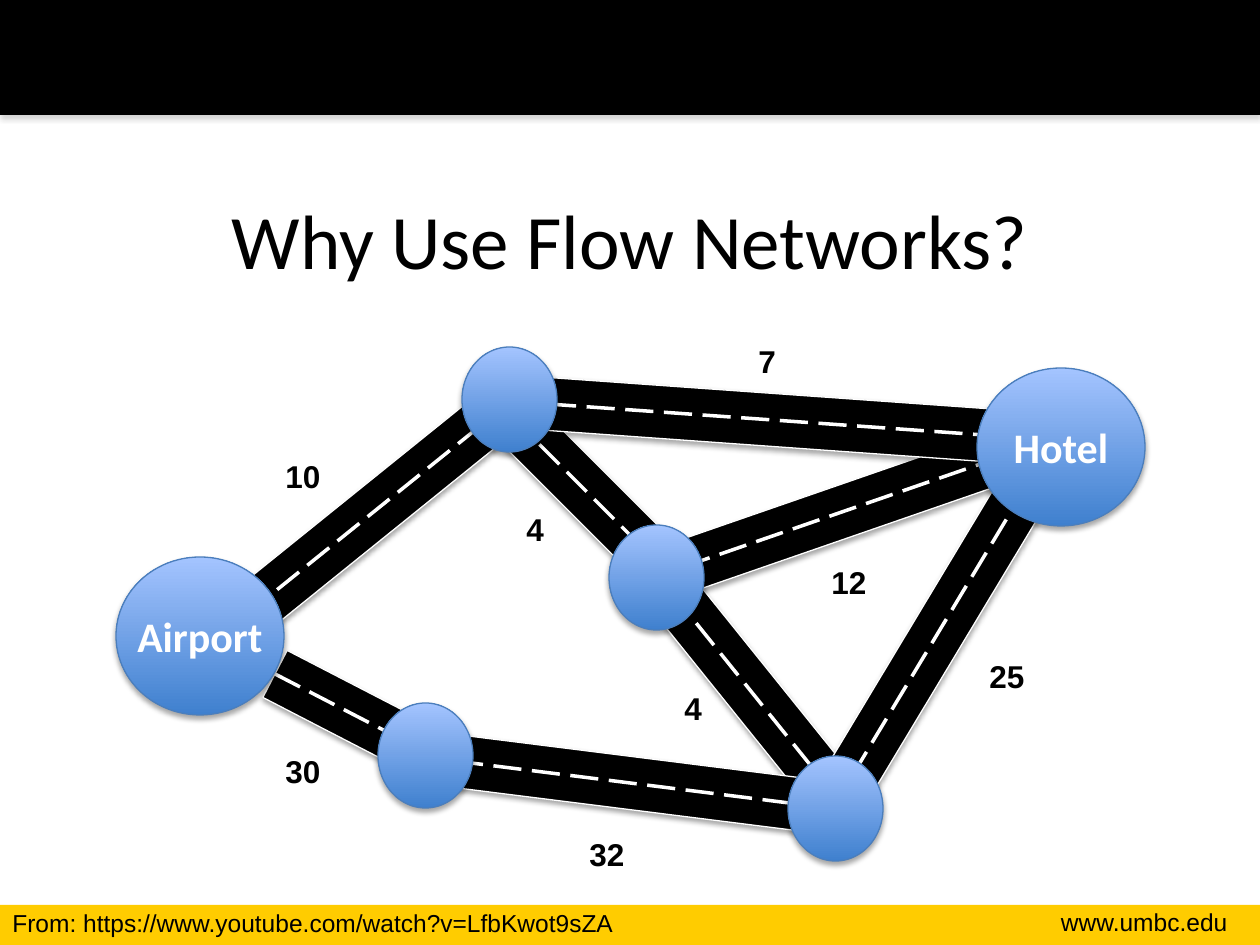
from math import atan2, degrees, hypot

from lxml import etree
from pptx import Presentation
from pptx.dml.color import RGBColor
from pptx.enum.dml import MSO_LINE
from pptx.enum.shapes import MSO_CONNECTOR, MSO_SHAPE
from pptx.enum.text import MSO_ANCHOR, PP_ALIGN
from pptx.oxml import parse_xml
from pptx.oxml.ns import nsdecls, qn
from pptx.util import Pt

RECT, OVAL = MSO_SHAPE.RECTANGLE, MSO_SHAPE.OVAL
STRAIGHT, LONG_DASH = MSO_CONNECTOR.STRAIGHT, MSO_LINE.LONG_DASH
LEFT, CENTER, RIGHT = PP_ALIGN.LEFT, PP_ALIGN.CENTER, PP_ALIGN.RIGHT
MIDDLE = MSO_ANCHOR.MIDDLE
TITLE_ONLY = 5

COLORS = {
    "black": "000000", "white": "FFFFFF", "gold": "FFCC00", "gray": "808080",
    "node_dark": "3F80CE", "node_light": "A4C4FF", "node_line": "4B7EBC",
}
ROAD_WIDTH = 53
LARGE, SMALL = (168, 158), (95, 105)

# Centre line of each road: x1, y1, x2, y2
ROADS = [
    (247, 614, 500, 410), (672, 593, 824, 782), (512, 417, 662, 567),
    (455, 761, 829, 808), (852, 776, 1021, 495), (683, 567, 1018, 451),
    (548, 404, 998, 436), (275, 674, 393, 735),
]
# Places: x, y, size, name
NODES = [
    (116, 557, LARGE, "Airport"), (977, 368, LARGE, "Hotel"),
    (462, 347, SMALL, ""), (378, 703, SMALL, ""),
    (788, 756, SMALL, ""), (609, 525, SMALL, ""),
]
# Road capacities: x, y, value
CAPACITIES = [
    (273, 451, 10), (273, 746, 30), (577, 829, 32), (977, 651, 25),
    (746, 336, 7), (514, 504, 4), (672, 683, 4), (819, 557, 12),
]


def px(n):
    return round(n * 914400 / 126)


def rgb(name):
    return RGBColor.from_string(COLORS[name])


def add_shadow(s, color="black", alpha=35, dist=1.8):
    """Give a shape or connector a soft shadow straight below it."""
    sp_pr = s._element.spPr
    for old in sp_pr.findall(qn("a:effectLst")):
        sp_pr.remove(old)
    effects = parse_xml(f"<a:effectLst {nsdecls('a')}/>")
    shadow = etree.SubElement(
        effects, qn("a:outerShdw"), blurRad=str(Pt(3.1)), dist=str(Pt(dist)),
        dir="5400000", rotWithShape="0")
    clr = etree.SubElement(shadow, qn("a:srgbClr"), val=COLORS[color])
    etree.SubElement(clr, qn("a:alpha"), val=str(alpha * 1000))
    sp_pr.append(effects)


def set_text(tf, text, size, font, color="black", bold=False, align=LEFT):
    p = tf.paragraphs[0]
    p.text = text
    p.alignment = align
    p.font.size, p.font.name, p.font.bold = Pt(size), font, bold
    p.font.color.rgb = rgb(color)


def add_label(slide, x, y, w, h, text, size, bold=False, align=LEFT, wrap=False):
    tf = slide.shapes.add_textbox(px(x), px(y), px(w), px(h)).text_frame
    tf.word_wrap = wrap
    set_text(tf, text, size, "Arial", bold=bold, align=align)


def add_bar(slide, y, h, color):
    s = slide.shapes.add_shape(RECT, 0, px(y), px(1260), px(h))
    s.shadow.inherit = False
    s.fill.solid()
    s.fill.fore_color.rgb = rgb(color)
    s.line.fill.background()
    return s


def add_road(slide, x1, y1, x2, y2):
    """Lay a black road along a dashed centre line."""
    length = hypot(x2 - x1, y2 - y1)
    group = slide.shapes.add_group_shape()
    road = group.shapes.add_shape(
        RECT, px((x1 + x2 - length) / 2), px((y1 + y2 - ROAD_WIDTH) / 2),
        px(length), px(ROAD_WIDTH))
    road.rotation = degrees(atan2(y2 - y1, x2 - x1)) % 360
    road.fill.solid()
    road.fill.fore_color.rgb = rgb("black")
    road.line.color.rgb = rgb("white")
    road.line.width = Pt(0.75)
    add_shadow(road)

    dashes = group.shapes.add_connector(STRAIGHT, px(x1), px(y1), px(x2), px(y2))
    dashes.line.color.rgb = rgb("white")
    dashes.line.width = Pt(2)
    dashes.line.dash_style = LONG_DASH
    add_shadow(dashes, alpha=38, dist=1.6)


def add_node(slide, x, y, size, name):
    w, h = size
    s = slide.shapes.add_shape(OVAL, px(x), px(y), px(w), px(h))
    s.fill.gradient()
    s.fill.gradient_angle = 90
    for stop, color in zip(s.fill.gradient_stops, ("node_dark", "node_light")):
        stop.color.rgb = rgb(color)
    s.line.color.rgb = rgb("node_line")
    s.line.width = Pt(0.75)
    add_shadow(s)
    if name:
        s.text_frame.word_wrap = False
        s.text_frame.vertical_anchor = MIDDLE
        set_text(s.text_frame, name, 24, "Calibri", "white", True, CENTER)


def add_title(slide, text):
    title = slide.shapes.title
    title.left, title.top = px(63), px(160)
    title.width, title.height = px(1134), px(158)
    title.text_frame.vertical_anchor = MIDDLE
    set_text(title.text_frame, text, 44, "Calibri", align=CENTER)


def main():
    prs = Presentation()
    prs.slide_width, prs.slide_height = px(1260), px(945)
    slide = prs.slides.add_slide(prs.slide_layouts[TITLE_ONLY])

    # Header and footer bands
    add_bar(slide, 905, 40, "gold")
    add_shadow(add_bar(slide, 0, 115, "black"), "gray")
    add_label(slide, 989, 901, 251, 43, "www.umbc.edu", 14, align=RIGHT, wrap=True)

    add_title(slide, "Why Use Flow Networks?")

    # Road network, with places drawn over the road ends
    for road in ROADS:
        add_road(slide, *road)
    for node in NODES:
        add_node(slide, *node)
    for x, y, value in CAPACITIES:
        add_label(slide, x, y, 60 if value > 9 else 43, 50, str(value), 18, bold=True)

    # Source
    add_label(slide, 0, 902, 630, 43,
              "From: https://www.youtube.com/watch?v=LfbKwot9sZA", 14)

    prs.save("out.pptx")


if __name__ == "__main__":
    main()
